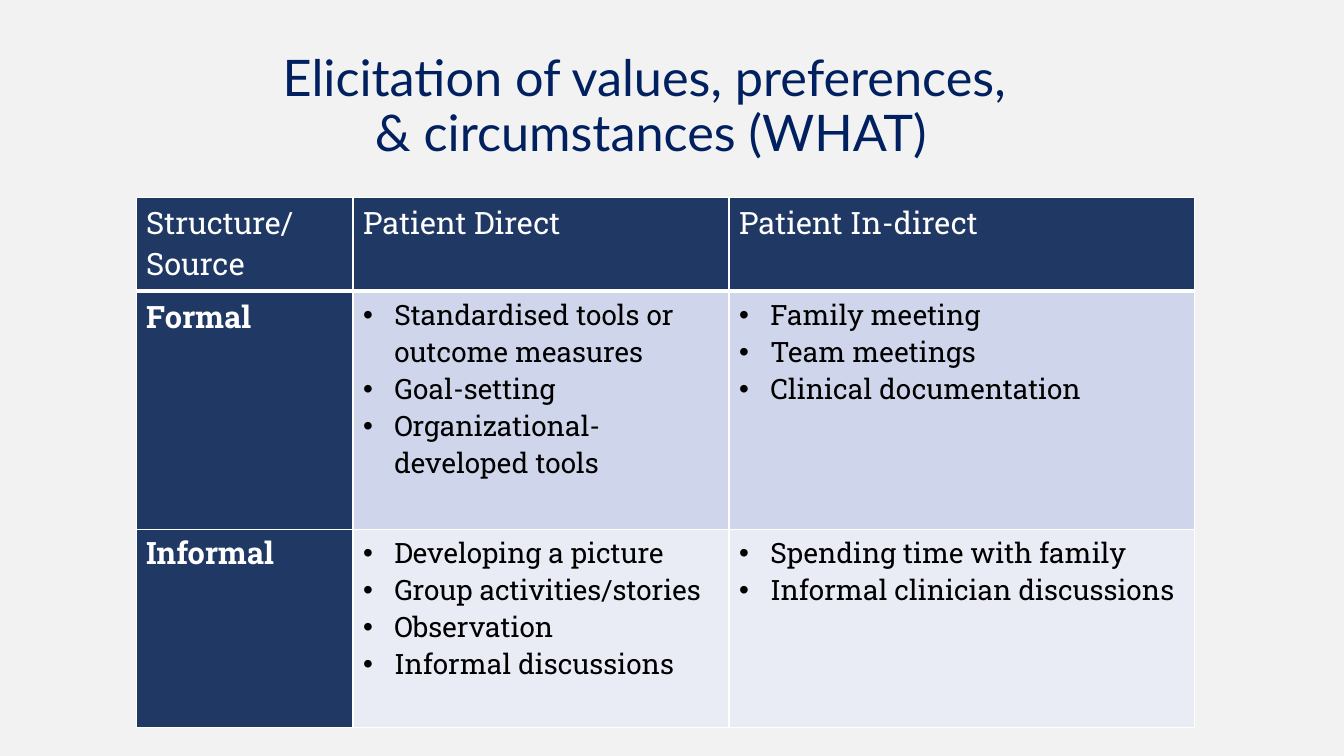
from dataclasses import dataclass

from lxml.etree import SubElement
from pptx import Presentation
from pptx.dml.color import RGBColor
from pptx.enum.text import MSO_ANCHOR, PP_ALIGN
from pptx.oxml.ns import qn
from pptx.util import Inches, Pt


@dataclass(frozen=True)
class Theme:
    back: str = "F2F2F2"
    title: str = "002060"
    navy: str = "203864"
    white: str = "FFFFFF"
    black: str = "000000"
    bands: tuple = ("CFD5EA", "E9EBF5")
    head_font: str = "Lato"
    body_font: str = "Roboto Slab"
    title_size: int = 36
    label_size: int = 22
    item_size: int = 20
    thin: int = 1
    thick: int = 3
    indent: float = 0.31


class Deck:
    def __init__(self, theme):
        self.theme = theme
        self.show = Presentation()
        self.show.slide_width = Inches(13.33)
        self.show.slide_height = Inches(7.5)
        self.slide = self.show.slides.add_slide(self.show.slide_layouts[6])
        self.paint(self.slide.background.fill, theme.back)

    def wide(self, share):
        return round(self.show.slide_width * share / 100)

    def high(self, share):
        return round(self.show.slide_height * share / 100)

    def place(self, left, top, width, height):
        return self.wide(left), self.high(top), self.wide(width), self.high(height)

    def paint(self, fill, color):
        fill.solid()
        fill.fore_color.rgb = RGBColor.from_string(color)

    def style(self, line, name, size, color, bold=False):
        font = line.font
        font.name, font.size, font.bold = name, Pt(size), bold
        font.color.rgb = RGBColor.from_string(color)

    def box(self, area):
        frame = self.slide.shapes.add_textbox(*self.place(*area)).text_frame
        frame.word_wrap = True
        return frame

    def title(self, area, text):
        frame = self.box(area)
        frame.vertical_anchor = MSO_ANCHOR.MIDDLE
        line = frame.paragraphs[0]
        line.text = text
        line.alignment = PP_ALIGN.CENTER
        line.line_spacing = 0.9
        self.style(line, self.theme.head_font, self.theme.title_size, self.theme.title)

    def lay(self, frame, lines, size, color, bold=False, listed=False):
        for index, text in enumerate(lines):
            line = frame.add_paragraph() if index else frame.paragraphs[0]
            line.text = text
            if listed:
                self.bullet(line)
            self.style(line, self.theme.body_font, size, color, bold)

    def label(self, frame, lines, bold=False):
        self.lay(frame, lines, self.theme.label_size, self.theme.white, bold)

    def bullet(self, line):
        props = line._p.get_or_add_pPr()
        indent = Inches(self.theme.indent)
        props.set("marL", str(indent))
        props.set("indent", str(-indent))
        SubElement(props, qn("a:buFont"), typeface="Arial")
        SubElement(props, qn("a:buChar"), char="•")

    def border(self, cell, base):
        props = cell._tc.get_or_add_tcPr()
        for side in "LRTB":
            width = base if side == "B" else self.theme.thin
            edge = SubElement(props, qn(f"a:ln{side}"), w=str(Pt(width)))
            fill = SubElement(edge, qn("a:solidFill"))
            SubElement(fill, qn("a:srgbClr"), val=self.theme.white)

    def table(self, left, top, cols, rows, cells):
        area = self.place(left, top, sum(cols), sum(rows))
        grid = self.slide.shapes.add_table(len(rows), len(cols), *area).table
        for col, share in zip(grid.columns, cols):
            col.width = self.wide(share)
        for row, share in zip(grid.rows, rows):
            row.height = self.high(share)
        for r, row in enumerate(cells):
            for c, lines in enumerate(row):
                cell = grid.cell(r, c)
                self.border(cell, self.theme.thin if r else self.theme.thick)
                if r and c:
                    self.paint(cell.fill, self.theme.bands[r - 1])
                    self.lay(cell.text_frame, lines, self.theme.item_size,
                             self.theme.black, listed=True)
                else:
                    self.paint(cell.fill, self.theme.navy)
                    self.label(cell.text_frame, lines, bold=r > 0)

    def save(self):
        self.show.save("out.pptx")


def main():
    deck = Deck(Theme())
    deck.title((3.75, 5.87, 89.35, 16.8),
               "Elicitation of values, preferences, \v& circumstances (WHAT)")
    left, top = 10.13, 26.13
    cols, rows = (16.13, 27.98, 34.66), (12.4, 31.47, 26.27)
    deck.table(left, top, cols, rows, [
        [["Structure/", "Source"], ["Patient Direct"], ["Patient In-direct"]],
        [["Formal"],
         ["Standardised tools or outcome measures", "Goal-setting",
          "Organizational-developed tools"],
         ["Family meeting", "Team meetings", "Clinical documentation"]],
        [[],
         ["Developing a picture", "Group activities/stories", "Observation",
          "Informal discussions"],
         ["Spending time with family", "Informal clinician discussions"]],
    ])
    deck.label(deck.box((left, top + sum(rows[:2]), 12.15, 6.27)), ["Informal"], bold=True)
    deck.save()


if __name__ == "__main__":
    main()
